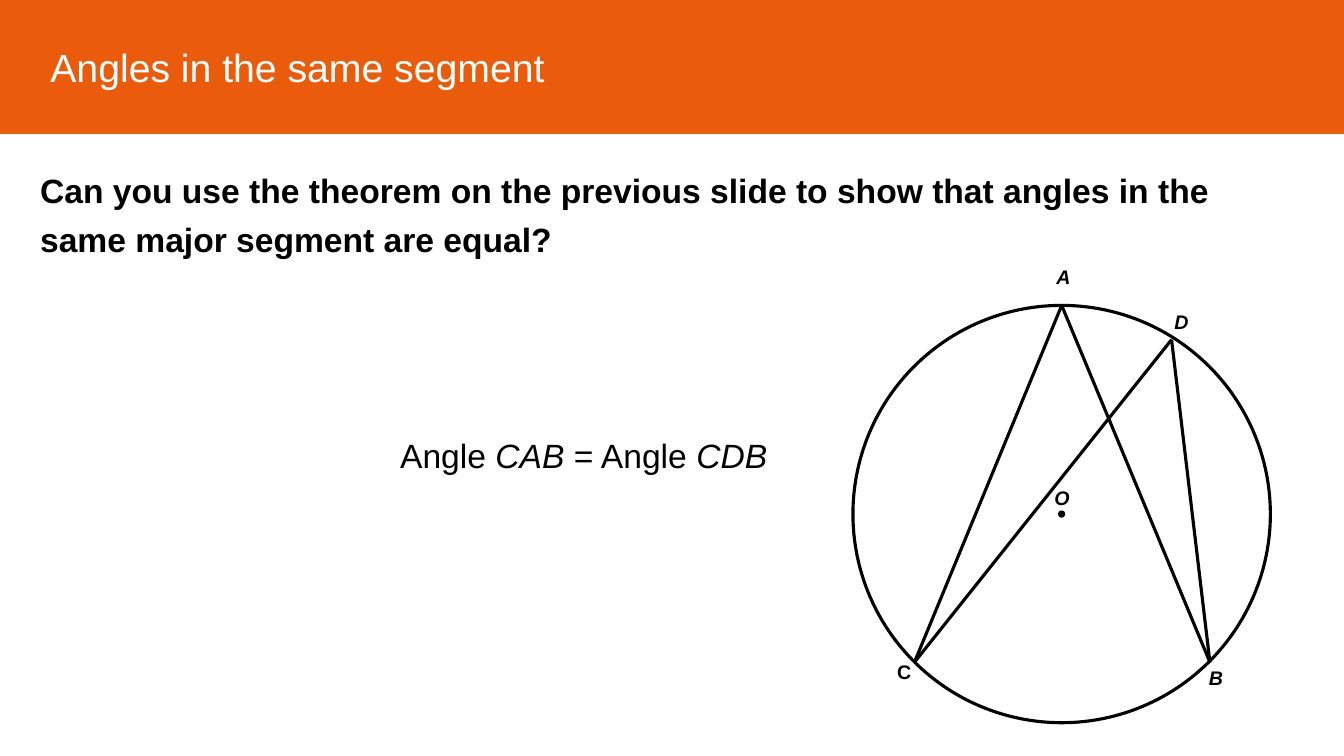
from lxml import etree
from pptx import Presentation
from pptx.dml.color import RGBColor
from pptx.enum.shapes import MSO_CONNECTOR, MSO_SHAPE
from pptx.enum.text import MSO_ANCHOR, PP_ALIGN
from pptx.oxml.ns import qn
from pptx.util import Inches, Pt

# Content
TITLE = "Angles in the same segment"
QUESTION = ("Can you use the theorem on the previous slide to show that "
            "angles in the same major segment are equal?")
EQUATION = [("Angle ", False), ("CAB", True), (" = Angle ", False), ("CDB", True)]

COLORS = {"banner": "EA5B0C", "ink": "000000", "title": "FFFFFF"}
FONT = "Arial"
STROKE = 2.25

# Circle geometry, in inches
CENTER = (10.53, 5.1)
RADIUS = 2.07
DOT_RADIUS = 0.02
POINTS = {"A": (10.53, 3.03), "B": (12, 6.57), "C": (9.07, 6.57), "D": (11.62, 3.37)}
CHORDS = ["CA", "BA", "CD", "DB"]
# Letter: left, top, italic
LABELS = {
    "A": (10.38, 2.58, True),
    "B": (11.89, 6.56, True),
    "C": (8.8, 6.5, False),
    "D": (11.55, 3.03, True),
    "O": (10.36, 4.77, True),
}
LABEL_SIZE = (0.38, 0.34)

prs = Presentation()
prs.slide_width, prs.slide_height = Inches(13.33), Inches(7.5)
s = prs.slides.add_slide(prs.slide_layouts[6])


def rgb(name):
    return RGBColor.from_string(COLORS[name])


def add_shape(kind, box, fill=None, line="ink", width=STROKE):
    sp = s.shapes.add_shape(kind, *map(Inches, box))
    sp.shadow.inherit = False
    if fill:
        sp.fill.solid()
        sp.fill.fore_color.rgb = rgb(fill)
    else:
        sp.fill.background()
    sp.line.color.rgb = rgb(line)
    sp.line.width = Pt(width)
    return sp


def add_circle(radius, fill=None):
    x, y = CENTER
    add_shape(MSO_SHAPE.OVAL, (x - radius, y - radius, 2 * radius, 2 * radius), fill)


def style(p, size, color="ink", bold=False, italic=None):
    p.alignment = PP_ALIGN.LEFT
    p.font.name, p.font.size = FONT, Pt(size)
    p.font.bold, p.font.italic = bold, italic
    p.font.color.rgb = rgb(color)


def add_text(box, runs, size, wrap=True, bold=False):
    tf = s.shapes.add_textbox(*map(Inches, box)).text_frame
    tf.word_wrap = wrap
    p = tf.paragraphs[0]
    style(p, size, bold=bold)
    for text, italic in runs:
        r = p.add_run()
        r.text = text
        r.font.italic = italic
    return p


# Title banner
banner = add_shape(MSO_SHAPE.RECTANGLE, (0, 0, 13.33, 1.32), "banner", "banner", 1)
tf = banner.text_frame
tf.margin_left = Inches(0.5)
tf.vertical_anchor = MSO_ANCHOR.MIDDLE
tf.text = TITLE
style(tf.paragraphs[0], 28, "title")

# Question and answer
question = add_text((0.3, 1.56, 12.6, 1.07), [(QUESTION, False)], 24, bold=True)
question.line_spacing = 1.2
add_text((3.87, 4.27, 3.88, 0.5), EQUATION, 24, wrap=False)

# Circle and its centre
add_circle(RADIUS)
add_circle(DOT_RADIUS, "ink")

# Chords
for start, end in CHORDS:
    ends = map(Inches, POINTS[start] + POINTS[end])
    chord = s.shapes.add_connector(MSO_CONNECTOR.STRAIGHT, *ends)
    chord.line.color.rgb = rgb("ink")
    chord.line.width = Pt(STROKE)
    etree.SubElement(chord._element.spPr, qn("a:effectLst"))

# Point labels
for letter, (left, top, italic) in LABELS.items():
    add_text((left, top, *LABEL_SIZE), [(letter, italic)], 14, bold=True)

prs.save("out.pptx")
